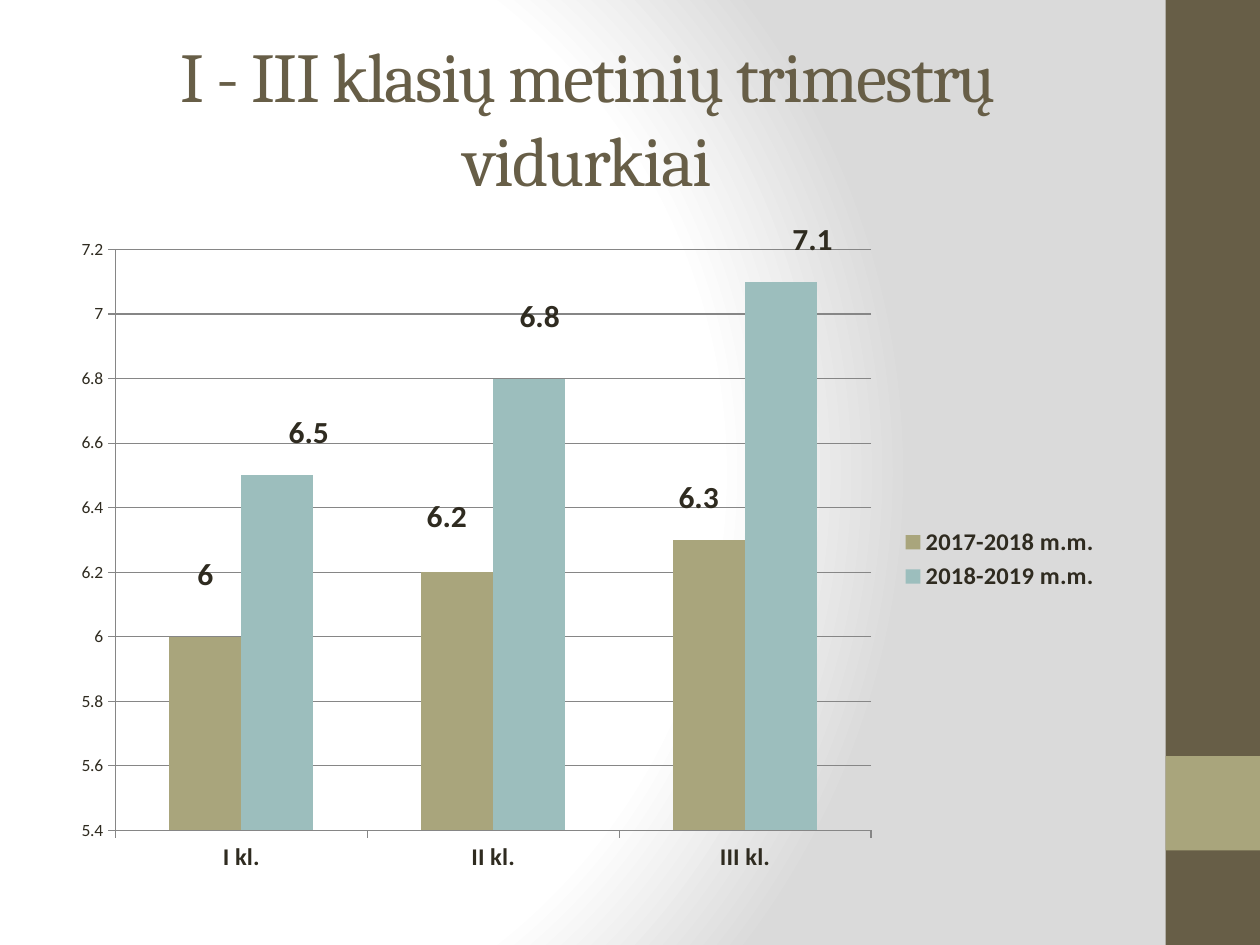
from typing import NamedTuple

from pptx import Presentation
from pptx.chart.data import CategoryChartData
from pptx.dml.color import RGBColor
from pptx.enum.chart import XL_CHART_TYPE, XL_LABEL_POSITION, XL_LEGEND_POSITION, XL_TICK_MARK
from pptx.enum.shapes import MSO_SHAPE
from pptx.enum.text import MSO_ANCHOR, MSO_AUTO_SIZE, PP_ALIGN
from pptx.oxml import parse_xml
from pptx.oxml.ns import nsdecls, qn
from pptx.util import Inches, Pt

BROWN = RGBColor(0x67, 0x5E, 0x47)
KHAKI = RGBColor(0xA9, 0xA5, 0x7C)
TEAL = RGBColor(0x9C, 0xBE, 0xBD)
INK = RGBColor(0x2F, 0x2B, 0x20)
GRID_GREY = RGBColor(0x86, 0x86, 0x86)
BACKGROUND_STOPS = {0: "FFFFFF", 75: "FFFFFF", 100: "DADADA"}


class Band(NamedTuple):
    top: float
    height: float
    color: RGBColor


class SchoolYear(NamedTuple):
    name: str
    averages: tuple[float, ...]
    color: RGBColor
    label_shifts: tuple[tuple[float, float], ...]


CLASSES = ("I kl.", "II kl.", "III kl.")
BANDS = (Band(0, 7.5, BROWN), Band(6, 0.75, KHAKI))
YEARS = (
    SchoolYear("2017-2018 m.m.", (6, 6.2, 6.3), KHAKI,
               ((0, -0.06), (-0.01, -0.05), (-0.01, -0.03))),
    SchoolYear("2018-2019 m.m.", (6.5, 6.8, 7.1), TEAL,
               ((0.03, -0.03), (0.01, -0.06), (0.03, -0.03))),
)


def paint_background(slide) -> None:
    slide.background.fill.solid()
    stops = "".join(f'<a:gs pos="{pos * 1000}"><a:srgbClr val="{color}"/></a:gs>'
                    for pos, color in BACKGROUND_STOPS.items())
    gradient = parse_xml(
        f'<a:gradFill {nsdecls("a")} rotWithShape="1"><a:gsLst>{stops}</a:gsLst>'
        '<a:path path="circle"><a:fillToRect l="20000" t="50000" r="100000" b="50000"/>'
        '</a:path></a:gradFill>')
    solid = next(slide.element.iter(qn("a:solidFill")))
    solid.getparent().replace(solid, gradient)


def draw_band(slide, band: Band) -> None:
    bar = slide.shapes.add_shape(MSO_SHAPE.RECTANGLE, Inches(9.25), Inches(band.top),
                                 Inches(0.75), Inches(band.height))
    bar.shadow.inherit = False
    bar.fill.solid()
    bar.fill.fore_color.rgb = band.color
    bar.line.fill.background()


def style_font(font, size: int, bold: bool, color: RGBColor = INK,
               name: str = "Calibri") -> None:
    for attribute, value in {"size": Pt(size), "bold": bold, "name": name}.items():
        setattr(font, attribute, value)
    font.color.rgb = color


def write_title(slide) -> None:
    title = slide.shapes.title
    box = {"left": 0.5, "top": 0.3, "width": 8.33, "height": 1.25}
    for side, length in box.items():
        setattr(title, side, Inches(length))
    frame = title.text_frame
    frame.text = "I - III klasių metinių trimestrų vidurkiai"
    frame.word_wrap = True
    frame.auto_size = MSO_AUTO_SIZE.NONE
    frame.vertical_anchor = MSO_ANCHOR.MIDDLE
    heading = frame.paragraphs[0]
    heading.alignment = PP_ALIGN.CENTER
    wording = heading.runs[0]
    style_font(wording.font, 40, False, BROWN, "Cambria")
    wording._r.get_or_add_rPr().set("spc", "-100")


def manual_layout(**values: object):
    settings = "".join(f'<c:{tag} val="{value}"/>' for tag, value in values.items())
    return parse_xml(f'<c:layout {nsdecls("c")}><c:manualLayout>{settings}'
                     '</c:manualLayout></c:layout>')


def style_series(series, year: SchoolYear) -> None:
    series.format.fill.solid()
    series.format.fill.fore_color.rgb = year.color
    series.invert_if_negative = False
    labels = series.data_labels
    labels.show_value = True
    style_font(labels.font, 18, True)
    for index in range(len(CLASSES)):
        label = series.points[index].data_label
        style_font(label.font, 18, True)
        label.position = XL_LABEL_POSITION.OUTSIDE_END
    for point, (x, y) in zip(series._element.iter(qn("c:dLbl")), year.label_shifts):
        point.insert(1, manual_layout(x=x, y=y))
    for leader_lines in series._element.iter(qn("c:showLeaderLines")):
        leader_lines.set("val", "0")


def draw_chart(slide) -> None:
    data = CategoryChartData()
    data.categories = CLASSES
    for year in YEARS:
        data.add_series(year.name, year.averages)
    chart = slide.shapes.add_chart(XL_CHART_TYPE.COLUMN_CLUSTERED, Inches(0.5), Inches(1.75),
                                   Inches(8.33), Inches(5.25), data).chart
    style_font(chart.font, 10, False)
    chart.has_title = False

    chart.has_legend = True
    chart.legend.position = XL_LEGEND_POSITION.RIGHT
    chart.legend.include_in_layout = False
    style_font(chart.legend.font, 14, True)

    averages, classes = chart.value_axis, chart.category_axis
    scale = {"minimum_scale": 5.4, "maximum_scale": 7.2, "major_unit": 0.2}
    for attribute, value in scale.items():
        setattr(averages, attribute, value)
    for axis in (averages, classes):
        axis.major_tick_mark = XL_TICK_MARK.OUTSIDE
        axis.format.line.color.rgb = GRID_GREY
    averages.has_major_gridlines = True
    averages.major_gridlines.format.line.color.rgb = GRID_GREY
    style_font(averages.tick_labels.font, 10, False)
    style_font(classes.tick_labels.font, 14, True)

    plot = chart.plots[0]
    plot.gap_width = 150
    plot.overlap = 0
    plot.vary_by_categories = False
    for series, year in zip(plot.series, YEARS):
        style_series(series, year)

    area = next(chart._chartSpace.iter(qn("c:plotArea")))
    for layout in area.findall(qn("c:layout")):
        area.remove(layout)
    area.insert(0, manual_layout(layoutTarget="inner", xMode="edge", yMode="edge",
                                 x=0.05, y=0.02, w=0.72, h=0.9))


def main() -> None:
    deck = Presentation()
    deck.slide_width, deck.slide_height = Inches(10), Inches(7.5)
    slide = deck.slides.add_slide(deck.slide_layouts[5])
    paint_background(slide)
    for band in BANDS:
        draw_band(slide, band)
    write_title(slide)
    draw_chart(slide)
    deck.save("out.pptx")


if __name__ == "__main__":
    main()
